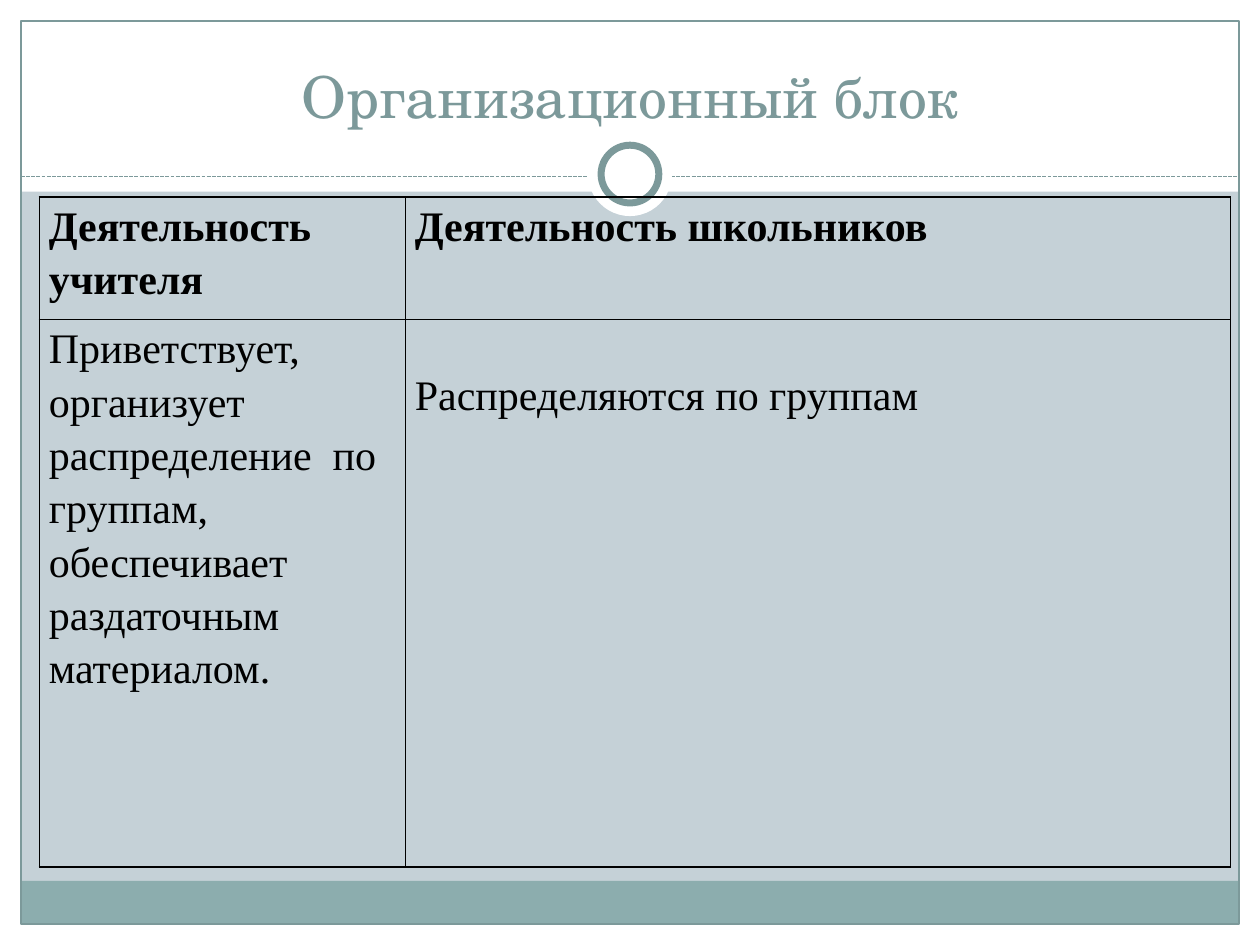
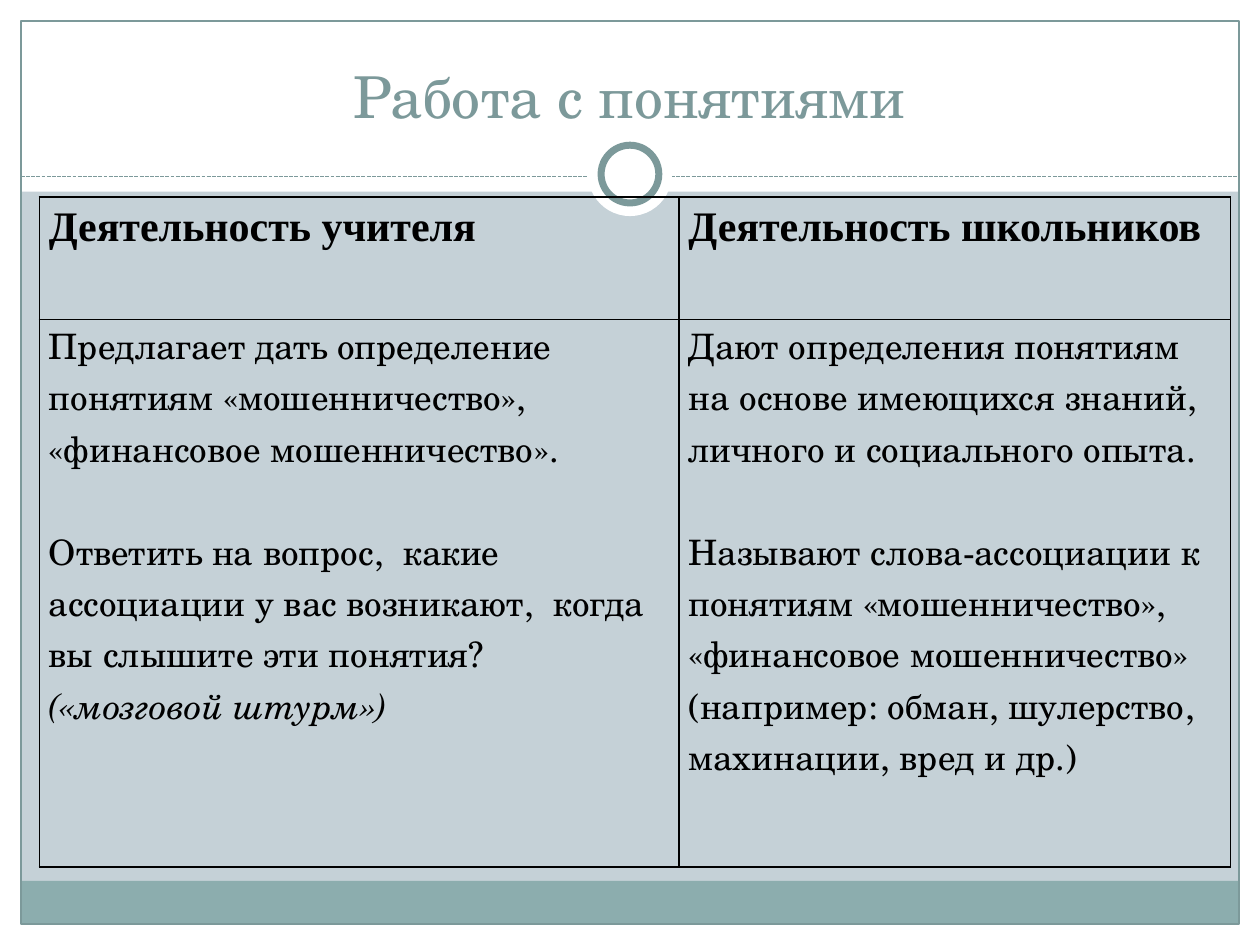
from lxml.etree import SubElement
from pptx import Presentation
from pptx.dml.color import RGBColor
from pptx.enum.dml import MSO_LINE
from pptx.enum.shapes import MSO_CONNECTOR, MSO_SHAPE
from pptx.enum.text import MSO_ANCHOR, MSO_AUTO_SIZE, PP_ALIGN
from pptx.oxml.ns import qn
from pptx.util import Pt

# Colours and fonts
PAPER = RGBColor(0xC5, 0xD1, 0xD7)
WHITE = RGBColor(0xFF, 0xFF, 0xFF)
BLACK = RGBColor(0, 0, 0)
TEAL = RGBColor(0x8C, 0xAD, 0xAE)
SLATE = RGBColor(0x7C, 0x99, 0x9A)
SERIF = "Times New Roman"
SCHOLA = "TeX Gyre Schola"

# Page measures in points
WIDE, HIGH = 720, 540
EDGE = 12
RULE = 101
HEADS = ["Деятельность учителя", "Деятельность школьников"]
ROWS = [70, 313]

# Text formats
TITLE = {"name": SCHOLA, "size": Pt(33), "color": SLATE}
HEAD = {"name": SERIF, "size": Pt(24), "bold": True, "color": BLACK}
LARGE = {**HEAD, "bold": False}
BODY = {**LARGE, "name": SCHOLA, "size": Pt(20)}
NOTE = {**BODY, "italic": True}
LOOSE = {"line_spacing": 1.15}
APART = {"space_after": Pt(29.4)}


def apply(item, form):
    for name, value in form.items():
        if name == "color":
            item.color.rgb = value
        else:
            setattr(item, name, value)


def add_form(slide, kind, box, fill=None, line=None, width=0.75):
    form = slide.shapes.add_shape(kind, *map(Pt, box))
    form.shadow.inherit = False
    if fill is None:
        form.fill.background()
    else:
        form.fill.solid()
        form.fill.fore_color.rgb = fill
    if line is None:
        form.line.fill.background()
    else:
        form.line.color.rgb = line
        form.line.width = Pt(width)


def add_rule(slide):
    rule = slide.shapes.add_connector(
        MSO_CONNECTOR.STRAIGHT, Pt(EDGE), Pt(RULE), Pt(WIDE - EDGE), Pt(RULE))
    apply(rule.line, {"color": SLATE, "width": Pt(0.75),
                      "dash_style": MSO_LINE.SQUARE_DOT})
    SubElement(rule._element.spPr, qn("a:effectLst"))


def add_ring(slide, size, **look):
    box = ((WIDE - size) / 2, 99.5 - size / 2, size, size)
    add_form(slide, MSO_SHAPE.OVAL, box, WHITE, **look)


def add_frame(slide):
    slide.background.fill.solid()
    slide.background.fill.fore_color.rgb = PAPER
    # White margins and the teal foot band
    bands = [
        ((0, HIGH - EDGE, WIDE, EDGE), WHITE),
        ((0, 0, WIDE, 109.5), WHITE),
        ((0, 0, EDGE, HIGH), WHITE),
        ((WIDE - EDGE, 0, EDGE, HIGH), WHITE),
        ((EDGE, 503.3, WIDE - 2 * EDGE, 24.7), TEAL),
    ]
    for box, fill in bands:
        add_form(slide, MSO_SHAPE.RECTANGLE, box, fill)
    # Outline, dashed rule and ring
    inner = (EDGE, EDGE, WIDE - 2 * EDGE, HIGH - 2 * EDGE)
    add_form(slide, MSO_SHAPE.RECTANGLE, inner, line=SLATE)
    add_rule(slide)
    add_ring(slide, 48)
    add_ring(slide, 33, line=SLATE, width=4)


def set_title(slide, text):
    title = slide.shapes.title
    apply(title, {"left": Pt(24), "top": Pt(18),
                  "width": Pt(672), "height": Pt(60)})
    frame = title.text_frame
    frame.text = text
    apply(frame, {"vertical_anchor": MSO_ANCHOR.BOTTOM,
                  "auto_size": MSO_AUTO_SIZE.NONE})
    para = frame.paragraphs[0]
    para.alignment = PP_ALIGN.CENTER
    apply(para.runs[0].font, TITLE)
    # Bring the title above the white bands
    slide.shapes._spTree.append(title._element)


def add_edges(cell):
    props = cell._tc.get_or_add_tcPr()
    for side in ("a:lnL", "a:lnR", "a:lnT", "a:lnB"):
        edge = SubElement(props, qn(side), w=str(Pt(1)))
        fill = SubElement(edge, qn("a:solidFill"))
        SubElement(fill, qn("a:srgbClr"), val=str(BLACK))


def fill_cell(cell, paras, top=0):
    add_edges(cell)
    cell.fill.background()
    apply(cell, {"margin_left": Pt(5.4), "margin_right": Pt(5.4),
                 "margin_top": Pt(top), "margin_bottom": 0})
    frame = cell.text_frame
    for i, (text, font, space) in enumerate(paras):
        para = frame.add_paragraph() if i else frame.paragraphs[0]
        run = para.add_run()
        run.text = text
        apply(run.font, font)
        apply(para, space)


def add_grid(slide, widths, cells, tops=(0, 0)):
    grid = slide.shapes.add_table(
        2, 2, Pt(22.5), Pt(112.5), Pt(sum(widths)), Pt(sum(ROWS))).table
    apply(grid, {"first_row": False, "horz_banding": False})
    for row, high in zip(grid.rows, ROWS):
        row.height = Pt(high)
    for i, width in enumerate(widths):
        grid.columns[i].width = Pt(width)
        fill_cell(grid.cell(0, i), [(HEADS[i], HEAD, LOOSE)])
        fill_cell(grid.cell(1, i), cells[i], tops[i])


def add_page(deck, title, *grid):
    slide = deck.slides.add_slide(deck.slide_layouts[5])
    add_frame(slide)
    set_title(slide, title)
    add_grid(slide, *grid)


def main():
    deck = Presentation()
    deck.slide_width, deck.slide_height = Pt(WIDE), Pt(HIGH)

    # Organisation: the right cell starts one line lower
    add_page(deck, "Организационный блок", (209.2, 471.4), [
        [("Приветствует, организует распределение  по группам, "
          "обеспечивает раздаточным материалом.", LARGE, LOOSE)],
        [("Распределяются по группам", LARGE, LOOSE)],
    ], (0, 27))

    # Work with terms
    add_page(deck, "Работа с понятиями", (365.5, 315.1), [
        [("Предлагает дать определение понятиям «мошенничество», "
          "«финансовое мошенничество».", BODY, APART),
         ("Ответить на вопрос,  какие ассоциации у вас возникают,  "
          "когда вы слышите эти понятия?", BODY, {}),
         ("(«мозговой штурм»)", NOTE, {})],
        [("Дают определения понятиям на основе имеющихся знаний, "
          "личного и социального опыта.", BODY, APART),
         ("Называют слова-ассоциации к понятиям «мошенничество», "
          "«финансовое мошенничество» (например: обман, шулерство, "
          "махинации, вред и др.)", BODY, {})],
    ])

    deck.save("out.pptx")


if __name__ == "__main__":
    main()
